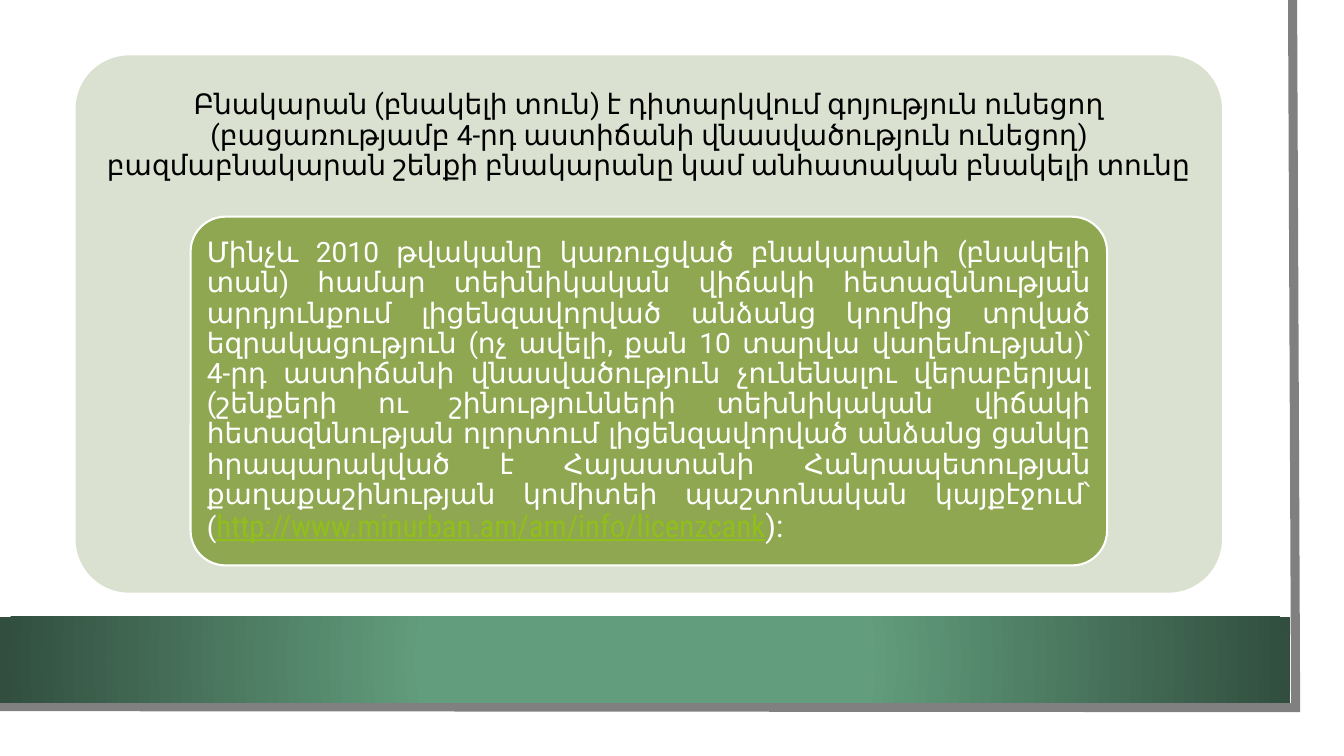
from lxml import etree
from pptx import Presentation
from pptx.dml.color import RGBColor
from pptx.enum import shapes, text
from pptx.oxml import parse_xml
from pptx.oxml.ns import nsdecls, qn
from pptx.util import Inches, Pt

WHITE = RGBColor(0xFF, 0xFF, 0xFF)
BLACK = RGBColor(0, 0, 0)
GREY = RGBColor(0x80, 0x80, 0x80)
PALE_GREEN = RGBColor(0xDB, 0xE1, 0xD0)
OLIVE = RGBColor(0x8F, 0xA7, 0x51)
LINK_GREEN = RGBColor(0x91, 0xBF, 0x1A)
BAND_LIGHT = RGBColor(0x62, 0x9D, 0x7D)
BAND_DARK = RGBColor(0x31, 0x4E, 0x3E)

HEADING = (
    "Բնակարան (բնակելի տուն) է դիտարկվում գոյություն ունեցող "
    "(բացառությամբ 4-րդ աստիճանի վնասվածություն ունեցող) "
    "բազմաբնակարան շենքի բնակարանը կամ անհատական բնակելի տունը"
)
REQUIREMENT = (
    "Մինչև 2010 թվականը կառուցված բնակարանի (բնակելի տան) համար տեխնիկական "
    "վիճակի հետազննության արդյունքում լիցենզավորված անձանց կողմից տրված "
    "եզրակացություն (ոչ ավելի, քան 10 տարվա վաղեմության)՝ 4-րդ աստիճանի "
    "վնասվածություն չունենալու վերաբերյալ (շենքերի ու շինությունների "
    "տեխնիկական վիճակի հետազննության ոլորտում լիցենզավորված անձանց ցանկը "
    "հրապարակված է Հայաստանի Հանրապետության քաղաքաշինության կոմիտեի "
    "պաշտոնական կայքէջում՝ ("
)
LICENCE_LIST = "http://www.minurban.am/am/info/licenzcank"


def add_run(paragraph, words, size=20, font="Roboto", color=WHITE, underline=False):
    run = paragraph.add_run()
    run.text = words
    run.font.size = Pt(size)
    run.font.name = font
    run.font.color.rgb = color
    run.font.underline = underline


def add_panel(kind, left, top, width, height, color):
    panel = slide.shapes.add_shape(
        kind, Inches(left), Inches(top), Inches(width), Inches(height))
    panel.shadow.inherit = False
    panel.fill.solid()
    panel.fill.fore_color.rgb = color
    panel.line.fill.background()
    return panel


prs = Presentation()
prs.slide_width, prs.slide_height = Inches(13.33), Inches(7.5)
slide = prs.slides.add_slide(prs.slide_layouts[5])

# Grey page edge along the right and bottom
edge_points = [(Inches(x), Inches(y)) for x, y in [(12.82, 0), (12.85, 7.02), (-0.03, 7.01)]]
builder = slide.shapes.build_freeform(*edge_points[0])
builder.add_line_segments(edge_points[1:], close=False)
page_edge = builder.convert_to_shape()
page_edge.shadow.inherit = False
page_edge.fill.background()
page_edge.line.color.rgb = GREY
page_edge.line.width = Pt(6.5)
etree.SubElement(page_edge.line._get_or_add_ln(), qn("a:miter"), lim="800000")

# Bottom band with a radial gradient
band = add_panel(shapes.MSO_SHAPE.RECTANGLE, 0, 6.12, 12.8, 0.85, BAND_LIGHT)
solid = band._element.spPr.find(qn("a:solidFill"))
solid.getparent().replace(solid, parse_xml(
    f'<a:gradFill {nsdecls("a")} rotWithShape="1"><a:gsLst>'
    f'<a:gs pos="34000"><a:srgbClr val="{BAND_LIGHT}"/></a:gs>'
    f'<a:gs pos="100000"><a:srgbClr val="{BAND_DARK}"/></a:gs></a:gsLst>'
    '<a:path path="circle"><a:fillToRect l="50000" t="50000" r="50000" b="50000"/></a:path>'
    '</a:gradFill>'))

# Outer card with the heading, inner card with the requirement
outer = add_panel(shapes.MSO_SHAPE.ROUNDED_RECTANGLE, 0.75, 0.55, 11.37, 5.33, PALE_GREEN)
inner = add_panel(shapes.MSO_SHAPE.ROUNDED_RECTANGLE, 1.89, 2.15, 9.09, 3.46, OLIVE)
inner.line.color.rgb = WHITE
inner.line.width = Pt(1.5)
for card in (outer, inner):
    card.adjustments[0] = 0.1

title = slide.shapes.title
title.left, title.top = Inches(0.75), Inches(0.55)
title.width, title.height = Inches(11.37), Inches(1.6)
slide.shapes._spTree.append(title._element)

for holder, align, inset in [
    (title, text.PP_ALIGN.CENTER, 0.08),
    (inner, text.PP_ALIGN.JUSTIFY, 0.06),
]:
    frame = holder.text_frame
    frame.word_wrap = True
    frame.auto_size = text.MSO_AUTO_SIZE.NONE
    frame.vertical_anchor = text.MSO_ANCHOR.MIDDLE
    frame.margin_left = frame.margin_right = Inches(inset)
    frame.margin_top = frame.margin_bottom = Inches(inset)
    frame.paragraphs[0].alignment = align
    frame.paragraphs[0].line_spacing = 0.9

add_run(title.text_frame.paragraphs[0], HEADING, color=BLACK)
requirement = inner.text_frame.paragraphs[0]
add_run(requirement, REQUIREMENT)
add_run(requirement, LICENCE_LIST, size=22, font="Roboto Condensed",
        color=LINK_GREEN, underline=True)
add_run(requirement, "):", size=22)

prs.save("out.pptx")
